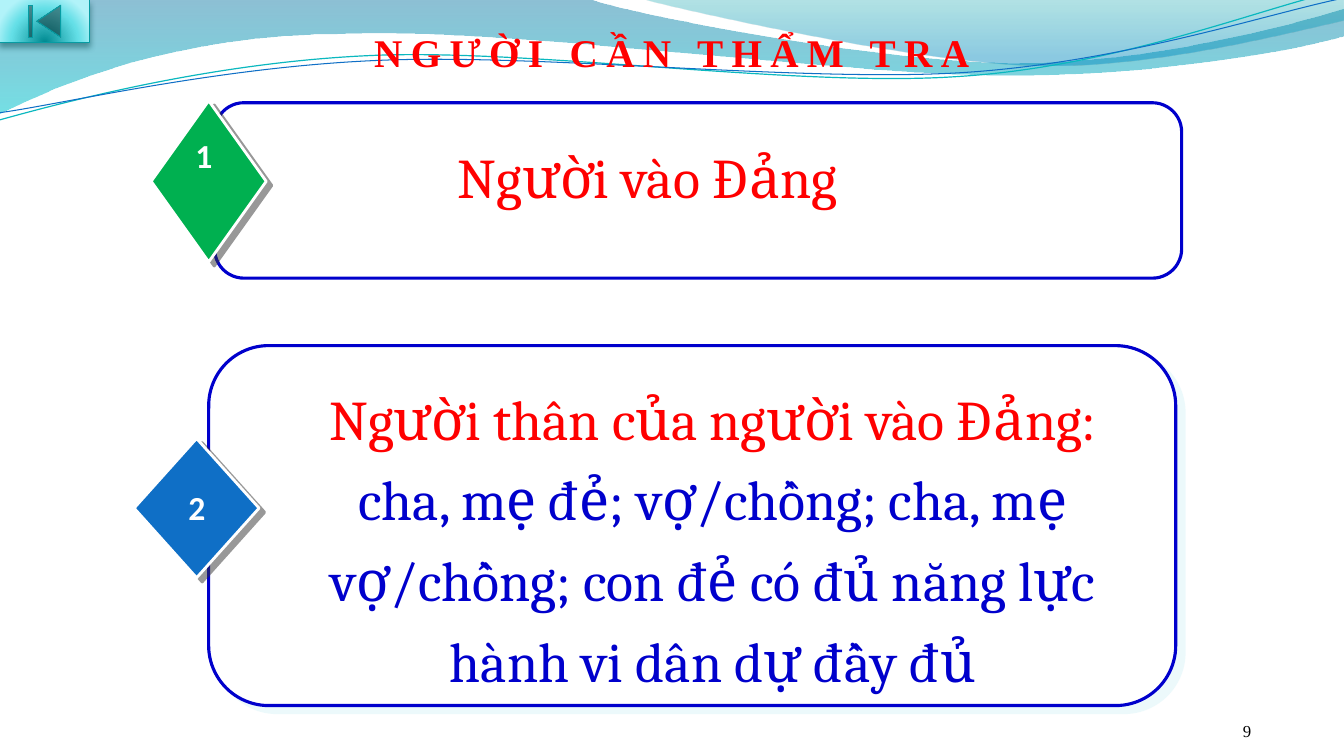
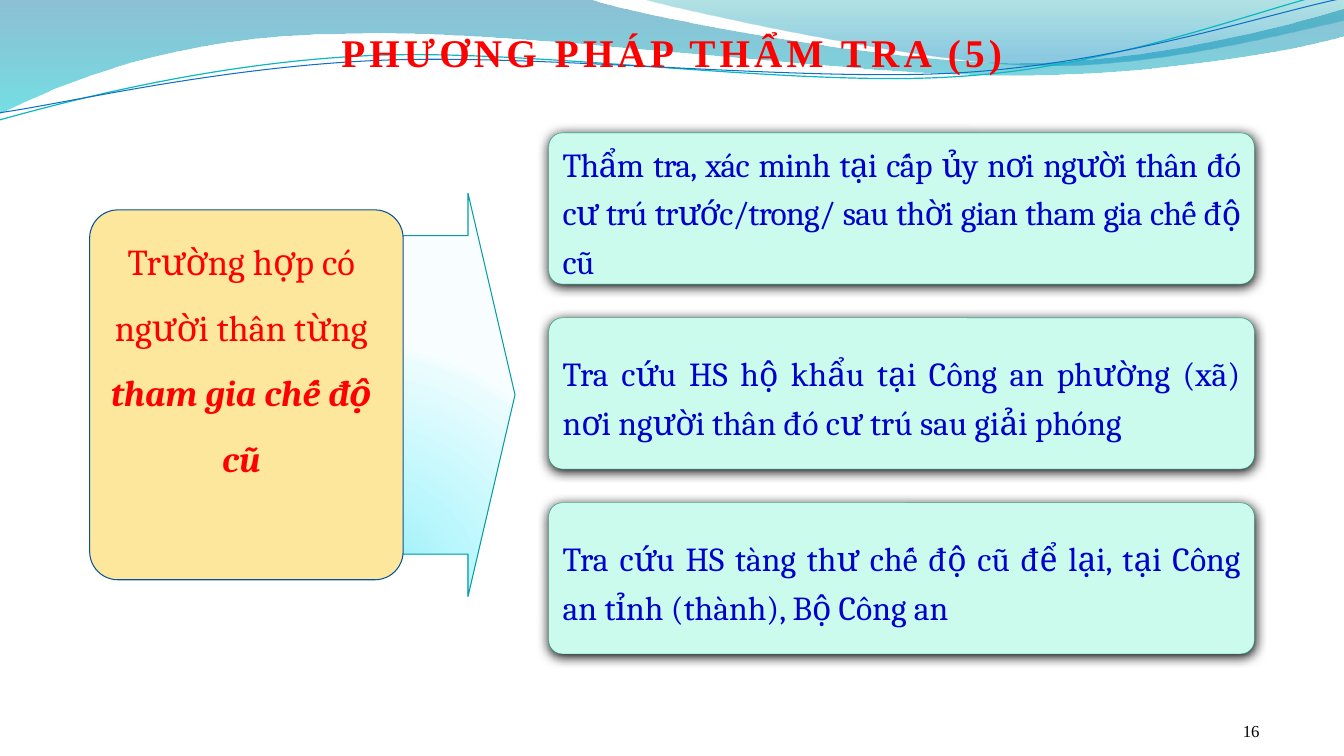
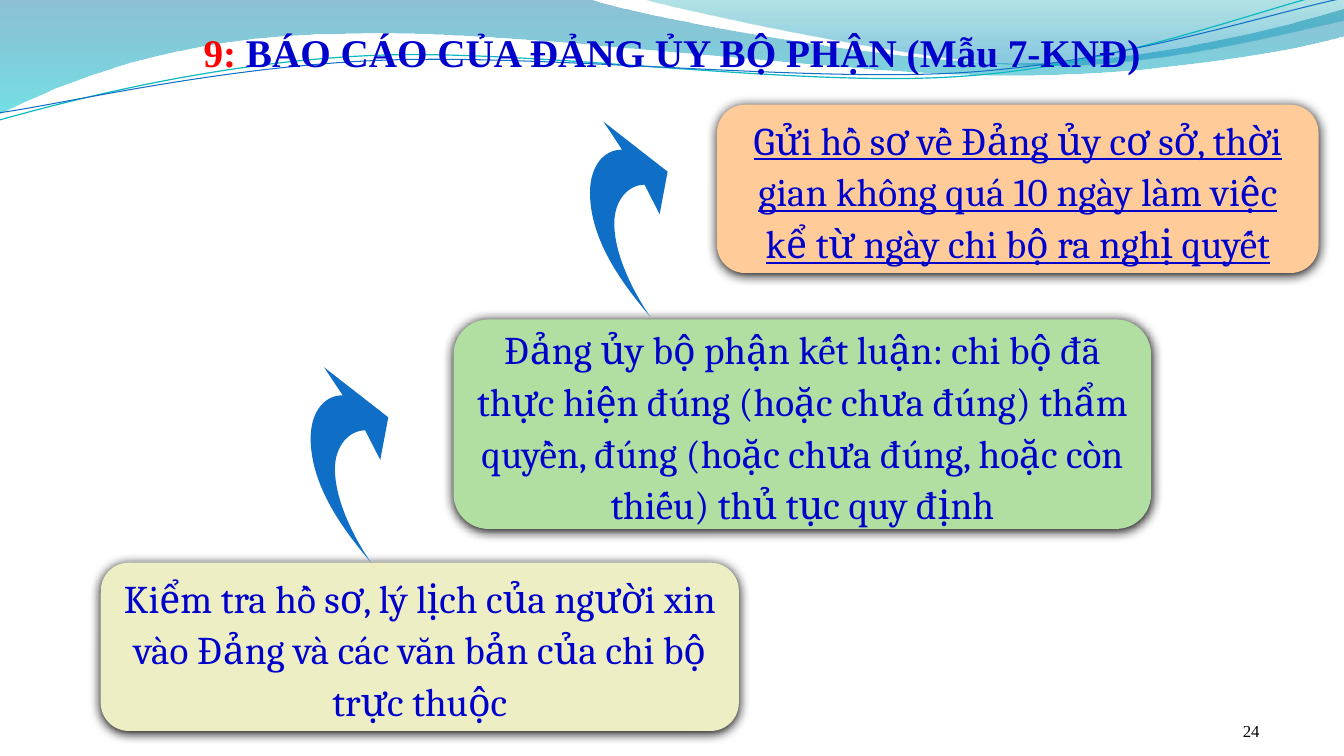
"""Build three slides on vetting party applicants, with a shared wave header."""
from dataclasses import dataclass

from lxml.etree import SubElement
from pptx import Presentation
from pptx.dml.color import RGBColor
from pptx.enum.shapes import MSO_SHAPE
from pptx.enum.text import MSO_ANCHOR, MSO_AUTO_SIZE, PP_ALIGN
from pptx.oxml.ns import qn
from pptx.util import Cm, Pt


@dataclass(frozen=True)
class Theme:
    red: str = "FF0000"
    ink: str = "0000CC"
    white: str = "FFFFFF"
    black: str = "000000"
    blue: str = "0F6FC6"
    aqua: str = "0AB8BF"
    teal: str = "069CA3"
    green: str = "00B050"
    mint: str = "CAFBED"
    mint_edge: str = "0C9B74"
    sand: str = "FCE79C"
    sand_edge: str = "095295"
    cream: str = "EEEEC4"
    leaf: str = "B0DFA1"
    peach: str = "FFCC99"
    wave: tuple = ((0, "0074A1", 45), (100, "00C6CF", 55))
    crest: tuple = ((0, "00A1A9", 30), (80, "008BBF", 45))
    button: tuple = ((0, "008A91", 100), (68, "64DFE7", 100), (100, "B1F3F9", 100))
    arrow: tuple = ((0, "8BE9F1", 100), (43, "B9F7FD", 100), (93, "EAFCFE", 100), (100, "F8FEFF", 100))
    glow: tuple = ("000000", 100, 8.5, 1, 90)
    hard: tuple = ("333333", 50, 0, 5, 37)
    pale: tuple = ("DBF5F9", 50, 0, 7.8, 40)
    soft: tuple = ("024B4E", 48, 4.5, 3, 90)
    head: str = "Times New Roman"
    body: str = "Cambria"
    digit: str = "Calibri"
    title: int = 28
    huge: int = 40
    large: int = 28
    medium: int = 26
    small: int = 24
    page: int = 12


T = Theme()


def style(sp, fill, line=None, width=0.75, shadow=None, radial=False):
    sp.shadow.inherit = False
    spPr = sp.element.spPr
    if isinstance(fill, tuple):
        sp.fill.gradient()
        grad = spPr.find(qn("a:gradFill"))
        for child in list(grad):
            grad.remove(child)
        stops = SubElement(grad, qn("a:gsLst"))
        for pos, colour, alpha in fill:
            gs = SubElement(stops, qn("a:gs"), pos=str(pos * 1000))
            clr = SubElement(gs, qn("a:srgbClr"), val=colour)
            SubElement(clr, qn("a:alpha"), val=str(alpha * 1000))
        if radial:
            way = SubElement(grad, qn("a:path"), path="circle")
            SubElement(way, qn("a:fillToRect"), l="50000", t="130000", r="50000", b="-30000")
        else:
            SubElement(grad, qn("a:lin"), ang="5400000", scaled="1")
    elif fill:
        sp.fill.solid()
        sp.fill.fore_color.rgb = RGBColor.from_string(fill)
    else:
        sp.fill.background()
    if line:
        sp.line.color.rgb = RGBColor.from_string(line)
        sp.line.width = Pt(width)
    else:
        sp.line.fill.background()
    if shadow:
        colour, alpha, blur, dist, angle = shadow
        shd = SubElement(spPr.find(qn("a:effectLst")), qn("a:outerShdw"), blurRad=str(Pt(blur)),
                         dist=str(Pt(dist)), dir=str(angle * 60000), algn="ctr", rotWithShape="0")
        clr = SubElement(shd, qn("a:srgbClr"), val=colour)
        SubElement(clr, qn("a:alpha"), val=str(alpha * 1000))


def write(sp, parts, size, font=T.body, spacing=1.0, align=PP_ALIGN.CENTER, anchor=MSO_ANCHOR.TOP, track=0):
    tf = sp.text_frame
    tf.word_wrap = True
    tf.auto_size = MSO_AUTO_SIZE.NONE
    tf.vertical_anchor = anchor
    p = tf.paragraphs[0]
    p.alignment = align
    p.line_spacing = spacing
    for text, colour, marks in parts:
        r = p.add_run()
        r.text = text
        r.font.name = font
        r.font.size = Pt(size)
        r.font.color.rgb = RGBColor.from_string(colour)
        r.font.bold = "b" in marks
        r.font.italic = "i" in marks
        r.font.underline = "u" in marks
        if track:
            r.font._element.set("spc", str(int(track * 100)))


prs = Presentation()
prs.slide_width, prs.slide_height = Cm(33.87), Cm(19.05)
layout = prs.slide_layouts[5]
for ph in list(layout.placeholders)[1:]:
    layout.shapes.element.remove(ph.element)

titles = [
    ([("NGƯỜI CẦN THẨM TRA", T.red, "b")], 6, "9"),
    ([("PHƯƠNG PHÁP THẨM TRA (5)", T.red, "b")], 3, "16"),
    ([("9: ", T.red, "b"), ("BÁO CÁO CỦA ĐẢNG ỦY BỘ PHẬN (Mẫu 7-KNĐ)", T.ink, "b")], 0, "24"),
]
slides = []
for parts, track, number in titles:
    s = prs.slides.add_slide(layout)
    title = s.shapes.title
    title.left, title.top, title.width, title.height = Cm(0), Cm(0), Cm(33.87), Cm(2.06)
    write(title, parts, T.title, T.head, 1.5, track=track)
    tb = s.shapes.add_textbox(Cm(31.07), Cm(18.03), Cm(2.64), Cm(0.76))
    write(tb, [(number, T.black, "")], T.page, T.head, align=PP_ALIGN.LEFT)
    slides.append(s)
people, method, report = slides

groups = [
    ((5.41, 2.59, 24.37, 4.42), None, (3.81, 2.54, 2.9, 4.06), T.green,
     (6.71, 3.12, 19.23, 2.31), [("Người vào Đảng", T.red, "")], (4.15, 3.28, 1.98, 2.24), "1"),
    ((5.26, 8.71, 24.37, 9.07), T.pale, (3.38, 11.05, 3.15, 3.51), T.blue,
     (6.84, 9.22, 22.25, 8.46),
     [("Người thân của người vào Đảng: ", T.red, ""),
      ("cha, mẹ đẻ; vợ/chồng; cha, mẹ vợ/chồng; con đẻ có đủ năng lực hành vi dân dự đầy đủ", T.ink, "")],
     (3.97, 12.14, 1.98, 1.78), "2"),
]
for card_at, shadow, diamond_at, colour, text_at, parts, digit_at, digit in groups:
    card = people.shapes.add_shape(MSO_SHAPE.ROUNDED_RECTANGLE, *map(Cm, card_at))
    style(card, T.white, T.ink, 2.25, shadow)
    diamond = people.shapes.add_shape(MSO_SHAPE.DIAMOND, *map(Cm, diamond_at))
    style(diamond, colour, T.white, 2, T.hard)
    write(people.shapes.add_textbox(*map(Cm, text_at)), parts, T.huge, spacing=1.2)
    write(people.shapes.add_textbox(*map(Cm, digit_at)), [(digit, T.white, "b")], T.small, T.digit)
button = people.shapes.add_shape(MSO_SHAPE.ACTION_BUTTON_BEGINNING, Cm(0), Cm(0), Cm(2.26), Cm(1.07))
style(button, T.button, T.teal, shadow=T.soft, radial=True)

arrow = method.shapes.add_shape(MSO_SHAPE.RIGHT_ARROW, Cm(5.08), Cm(4.87), Cm(7.9), Cm(10.16))
arrow.adjustments[0], arrow.adjustments[1] = 0.79, 0.15
style(arrow, T.arrow, T.teal, radial=True)
checks = [
    ("Thẩm tra, xác minh tại cấp ủy nơi người thân đó cư trú trước/trong/ sau thời gian tham gia chế độ cũ", -0.5),
    ("Tra cứu HS hộ khẩu tại Công an phường (xã) nơi người thân đó cư trú sau giải phóng", 0),
    ("Tra cứu HS tàng thư chế độ cũ để lại, tại Công an tỉnh (thành), Bộ Công an", 0),
]
for i, (text, track) in enumerate(checks):
    sp = method.shapes.add_shape(MSO_SHAPE.ROUNDED_RECTANGLE, Cm(13.83), Cm(3.35 + 4.66 * i), Cm(17.78), Cm(3.81))
    sp.adjustments[0] = 0.09
    style(sp, T.mint, T.mint_edge, 0.25, T.glow)
    write(sp, [(text, T.ink, "")], T.small, spacing=1.2, align=PP_ALIGN.JUSTIFY,
          anchor=MSO_ANCHOR.MIDDLE, track=track)
case = method.shapes.add_shape(MSO_SHAPE.ROUNDED_RECTANGLE, Cm(2.26), Cm(5.29), Cm(7.9), Cm(9.32))
case.adjustments[0] = 0.09
style(case, T.sand, T.sand_edge)
tb = method.shapes.add_textbox(Cm(2.26), Cm(5.36), Cm(7.65), Cm(6.93))
write(tb, [("Trường hợp có người thân từng ", T.red, ""), ("tham gia chế độ cũ", T.red, "bi")],
      T.medium, spacing=1.5)

stages = [
    ((2.54, 14.18, 16.08, 4.24), T.cream, "",
     "Kiểm tra hồ sơ, lý lịch của người xin vào Đảng và các văn bản của chi bộ trực thuộc"),
    ((11.43, 8.05, 17.58, 5.28), T.leaf, "",
     "Đảng ủy bộ phận kết luận: chi bộ đã thực hiện đúng (hoặc chưa đúng) thẩm quyền, "
     "đúng (hoặc chưa đúng, hoặc còn thiếu) thủ tục quy định"),
    ((18.07, 2.64, 15.16, 4.24), T.peach, "u",
     "Gửi hồ sơ về Đảng ủy cơ sở, thời gian không quá 10 ngày làm việc kể từ ngày chi bộ ra nghị quyết"),
]
for at, colour, marks, text in stages:
    sp = report.shapes.add_shape(MSO_SHAPE.ROUNDED_RECTANGLE, *map(Cm, at))
    style(sp, colour, shadow=T.glow)
    write(sp, [(text, T.ink, marks)], T.large, spacing=1.1, anchor=MSO_ANCHOR.MIDDLE)

wave = [(0, 0), [(14.91, 0)],
        [(16.1, 0.43), (22.48, 1.6), (25.68, 1.6)], [(28.88, 1.6), (32.46, 0.66), (33.87, 0.23)],
        [(33.87, 0.91)], [(33.3, 1.12), (29.46, 1.93), (25.25, 1.9)],
        [(21.06, 1.9), (12.93, 0.71), (8.71, 0.86)], [(4.34, 0.89), (1.55, 2.11), (0, 2.87)]]
crest = [(16.23, 0), [(17.25, 0.28), (23.09, 1.57), (26.04, 1.65)],
         [(28.98, 1.75), (32.56, 0.81), (33.87, 0.53)], [(33.87, 0)]]
aqua_line = [(0, 3.02), [(1.63, 2.57), (5.36, 1.57), (9.37, 1.4)],
             [(13.39, 1.22), (20.04, 2.21), (24.13, 1.93)], [(28.19, 1.68), (31.78, 0.2), (33.81, -0.25)]]
blue_line = [(0, 2.84), [(1.6, 2.62), (5.54, 1.68), (9.6, 1.52)],
             [(13.64, 1.35), (20.22, 2.08), (24.26, 1.83)], [(28.32, 1.57), (31.88, 0.36), (33.87, -0.05)]]
swoosh = [(0, 4.27), [(0.14, 3.57), (0.48, 2.54), (1.06, 1.98)], [(1.48, 1.57), (2.01, 1.56), (2.29, 1.85)],
          [(2.02, 2.64)], [(2.93, 2.04)], [(2.71, 0)], [(2.53, 0.83)],
          [(2.22, 0.5), (1.68, 0.53), (1.19, 1)], [(0.33, 1.84), (0.11, 3.18), (0, 4.27)]]
outlines = [
    (layout, 0, 0, wave, T.wave, None, 0, 0),
    (layout, 0, 0, crest, T.crest, None, 0, 0),
    (layout, 0, 0, aqua_line, None, T.aqua, 0.85, 0),
    (layout, 0, 0, blue_line, None, T.blue, 0.75, 0),
    (report, 7.37, 9.5, swoosh, T.blue, None, 0, 314.1),
    (report, 14.41, 3.31, swoosh, T.blue, None, 0, 314.1),
]
for i, (home, left, top, (start, *steps), fill, line, width, turn) in enumerate(outlines):
    points = [(Cm(left + x), Cm(top + y)) for x, y in [start, *sum(steps, [])]]
    fb = report.shapes.build_freeform(*points[0])
    fb.add_line_segments(points[1:], close=bool(fill))
    sp = fb.convert_to_shape()
    segments = iter(list(sp.element.iter(qn("a:lnTo"))))
    for step in steps:
        parts = [next(segments) for _ in step]
        if len(parts) == 3:
            curve = SubElement(parts[0].getparent(), qn("a:cubicBezTo"))
            parts[0].addprevious(curve)
            for part in parts:
                curve.append(part[0])
                part.getparent().remove(part)
    style(sp, fill, line, width)
    sp.rotation = turn
    sp.element.nvSpPr.cNvPr.set("id", str(20 + i))
    home.shapes.element.append(sp.element)

prs.save("out.pptx")
